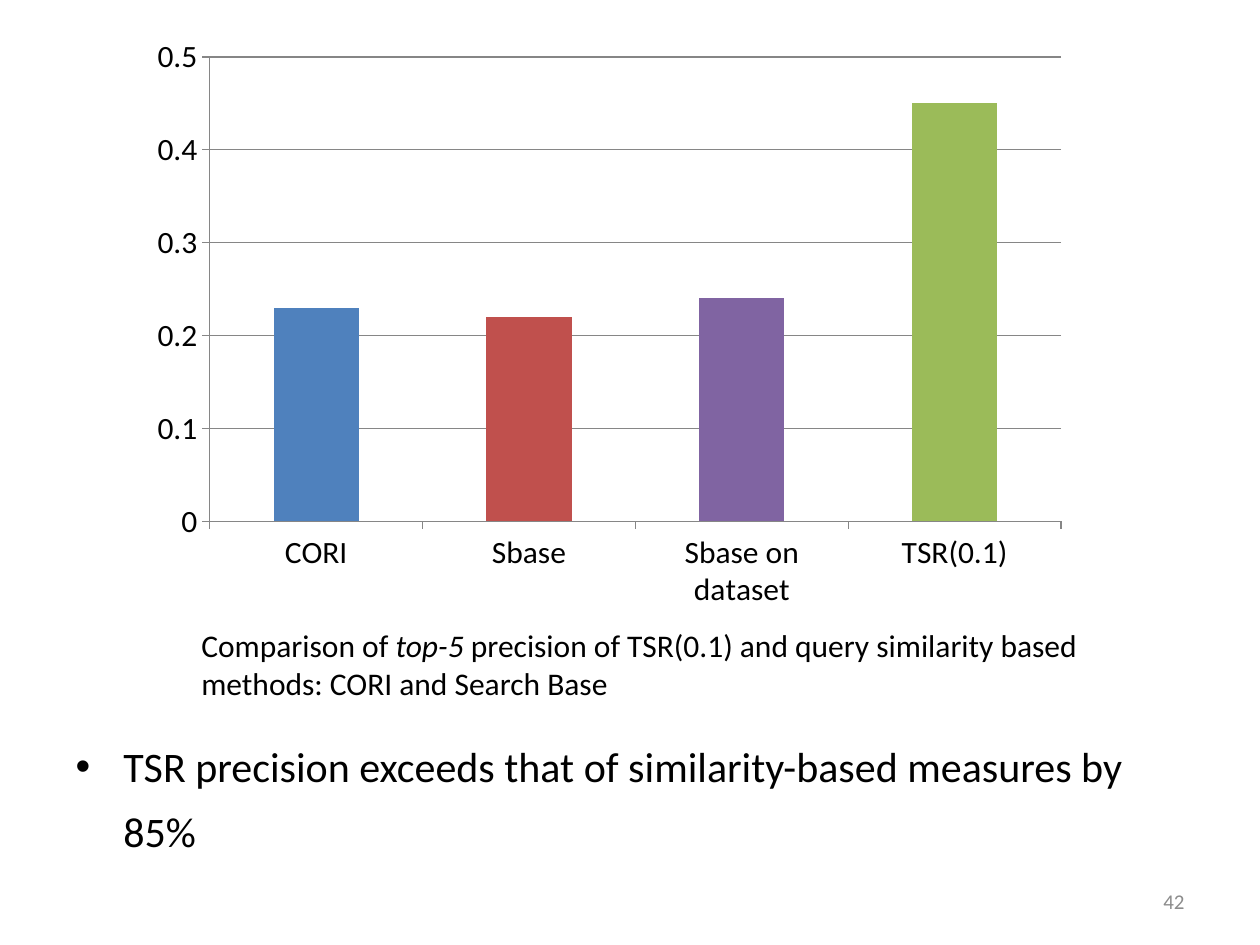
import pptx
import pptx.chart.data
import pptx.dml.color
import pptx.enum.chart
import pptx.enum.text
import pptx.oxml
import pptx.oxml.ns
import pptx.util
from pptx.util import Inches

FONT = "Calibri"
AXIS_COLOR = "868686"
PRECISION = {
    "CORI": (0.23, "4F81BD"),
    "Sbase": (0.22, "C0504D"),
    "Sbase on dataset": (0.24, "8064A2"),
    "TSR(0.1)": (0.45, "9BBB59"),
}


def rgb(color):
    return pptx.dml.color.RGBColor.from_string(color)


def format_font(font, size, color="000000", italic=None):
    font.name = FONT
    font.size = pptx.util.Pt(size)
    font.color.rgb = rgb(color)
    font.italic = italic


def add_text(paragraph, text, **text_format):
    run = paragraph.add_run()
    run.text = text
    format_font(run.font, **text_format)


def add_text_box(slide, left, top, width, height):
    frame = slide.shapes.add_textbox(
        Inches(left), Inches(top), Inches(width), Inches(height)
    ).text_frame
    frame.word_wrap = True
    return frame


def add_slide_number(slide):
    frame = add_text_box(slide, 7.17, 6.95, 2.33, 0.4)
    frame.vertical_anchor = pptx.enum.text.MSO_ANCHOR.MIDDLE
    paragraph = frame.paragraphs[0]
    paragraph.alignment = pptx.enum.text.PP_ALIGN.RIGHT
    add_text(paragraph, "42", size=12, color="8C8C8C")


def add_caption(slide):
    paragraph = add_text_box(slide, 1.5, 4.92, 7.33, 0.71).paragraphs[0]
    add_text(paragraph, "Comparison of ", size=18)
    add_text(paragraph, "top-5 ", size=18, italic=True)
    add_text(
        paragraph,
        "precision of TSR(0.1) and query similarity based methods: CORI and Search Base",
        size=18,
    )


def fill_body(slide):
    body = slide.placeholders[1]
    body.left, body.top = Inches(0.5), Inches(5.83)
    body.width, body.height = Inches(9), Inches(1.33)
    frame = body.text_frame
    frame.auto_size = pptx.enum.text.MSO_AUTO_SIZE.NONE
    paragraph = frame.paragraphs[0]
    paragraph.space_before = pptx.util.Pt(5)
    properties = paragraph._p.get_or_add_pPr()
    properties.set("marL", str(Inches(0.38)))
    properties.set("indent", str(-Inches(0.38)))
    add_text(
        paragraph,
        "TSR precision exceeds that of similarity-based measures by 85%",
        size=24,
    )
    add_text(paragraph, " ", size=32)


def place_plot(chart, left, top, width, height):
    layout = pptx.oxml.parse_xml(
        f"<c:layout {pptx.oxml.ns.nsdecls('c')}><c:manualLayout>"
        '<c:layoutTarget val="inner"/><c:xMode val="edge"/><c:yMode val="edge"/>'
        f'<c:x val="{left}"/><c:y val="{top}"/>'
        f'<c:w val="{width}"/><c:h val="{height}"/>'
        "</c:manualLayout></c:layout>"
    )
    plot_area = chart._chartSpace.chart.plotArea
    for old_layout in plot_area.findall(pptx.oxml.ns.qn("c:layout")):
        plot_area.remove(old_layout)
    plot_area.insert(0, layout)


def format_line(line):
    line.color.rgb = rgb(AXIS_COLOR)
    line.width = pptx.util.Pt(0.75)


def add_precision_chart(slide):
    data = pptx.chart.data.CategoryChartData()
    data.categories = list(PRECISION)
    data.add_series("Series 1", [value for value, color in PRECISION.values()])
    chart = slide.shapes.add_chart(
        pptx.enum.chart.XL_CHART_TYPE.COLUMN_CLUSTERED,
        Inches(1), Inches(0.25), Inches(7.83), Inches(4.58), data,
    ).chart
    chart.has_legend = False
    chart.has_title = False
    format_font(chart.font, size=18)
    place_plot(chart, 0.085, 0.045, 0.863, 0.819)

    plot = chart.plots[0]
    plot.gap_width = 150
    plot.vary_by_categories = False
    series = plot.series[0]
    colors = [color for value, color in PRECISION.values()]
    series.format.fill.solid()
    series.format.fill.fore_color.rgb = rgb(colors[0])
    for index, color in enumerate(colors[1:], start=1):
        fill = series.points[index].format.fill
        fill.solid()
        fill.fore_color.rgb = rgb(color)

    for axis in (chart.category_axis, chart.value_axis):
        axis.major_tick_mark = pptx.enum.chart.XL_TICK_MARK.OUTSIDE
        format_line(axis.format.line)
    value_axis = chart.value_axis
    value_axis.minimum_scale = 0
    value_axis.maximum_scale = 0.5
    value_axis.major_unit = 0.1
    value_axis.has_major_gridlines = True
    format_line(value_axis.major_gridlines.format.line)


def main():
    presentation = pptx.Presentation()
    presentation.slide_width = Inches(10)
    presentation.slide_height = Inches(7.5)
    slide = presentation.slides.add_slide(presentation.slide_layouts[1])
    title = slide.shapes.title._element
    title.getparent().remove(title)
    add_slide_number(slide)
    add_caption(slide)
    fill_body(slide)
    add_precision_chart(slide)
    presentation.save("out.pptx")


if __name__ == "__main__":
    main()
